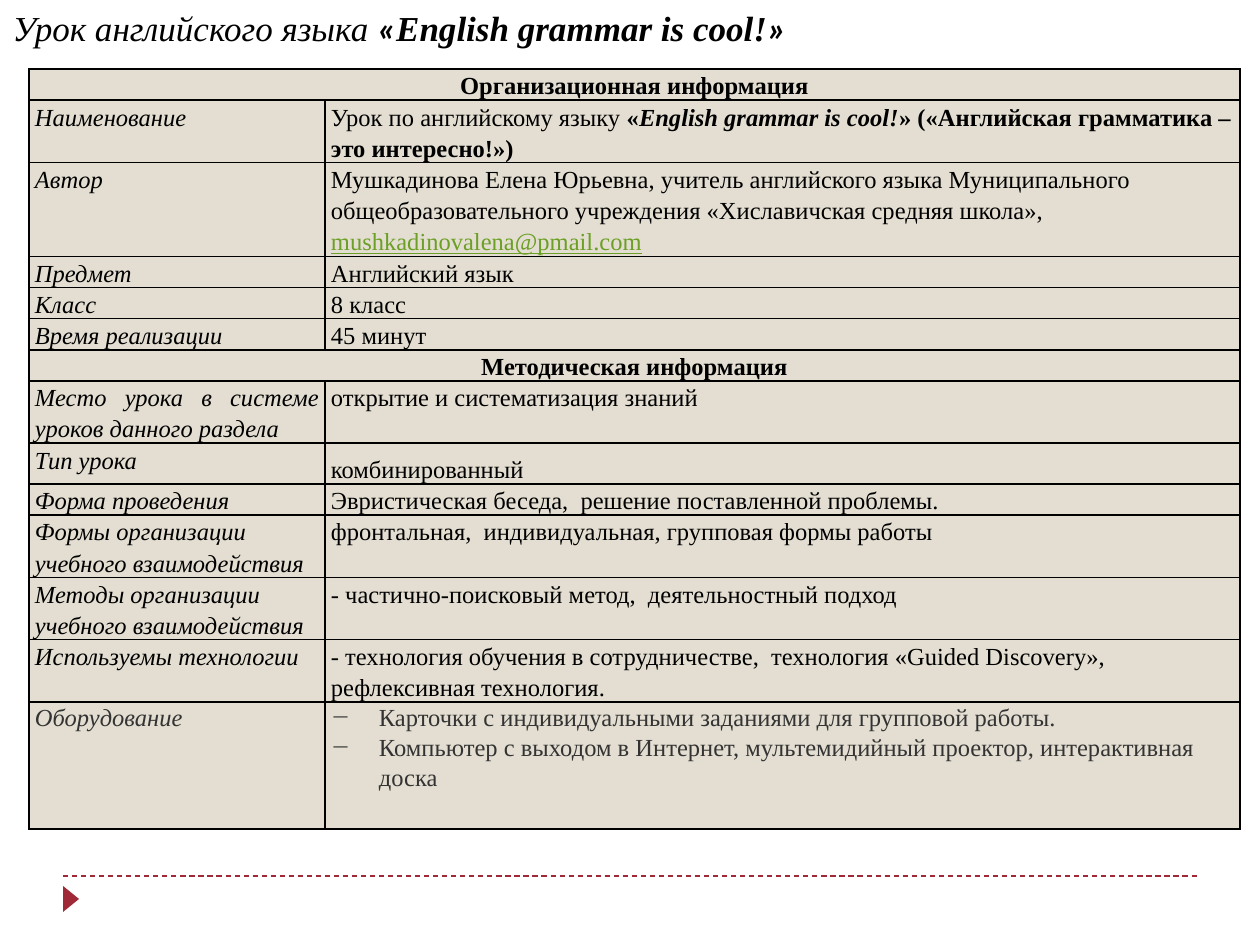
from lxml import etree
from pptx import Presentation
from pptx import util as u
from pptx.dml.color import RGBColor
from pptx.enum import dml, shapes, text
from pptx.oxml.ns import qn

COLOURS = {"ink": "000000", "soft": "333333", "mail": "6B9F25", "cell": "E3DED1",
           "accent": "9F2936", "paper": "FFFFFF"}
SERIF = "Times New Roman"
TITLE = [("Урок английского языка ", "i", SERIF), ("«", "bi", "Calibri"),
         ("English grammar is cool!", "bi", SERIF), ("»", "bi", "Calibri")]

# Row height, label, value runs (text, style); a row without a value is a section heading.
ROWS = [
    (31, "Организационная информация", None),
    (62, "Наименование", [
        ("Урок по английскому языку ", ""), ("«", "b"), ("English grammar is cool!", "bi"),
        ("» («Английская грамматика – это интересно!»)", "b")]),
    (94, "Автор", [
        ("Мушкадинова Елена Юрьевна, учитель английского языка Муниципального "
         "общеобразовательного учреждения «Хиславичская средняя школа», ", ""),
        ("mushkadinovalena@pmail.com", "u")]),
    (31, "Предмет", [("Английский язык", "")]),
    (31, "Класс", [("8 класс", "")]),
    (31, "Время реализации", [("45 минут", "")]),
    (31, "Методическая информация", None),
    (62, "Место урока в системе уроков данного раздела",
     [("открытие и систематизация знаний", "")]),
    (38, "Тип урока", [("комбинированный", "")]),
    (31, "Форма проведения", [("Эвристическая беседа,  решение поставленной проблемы.", "")]),
    (62, "Формы организации учебного взаимодействия",
     [("фронтальная,  индивидуальная, групповая формы работы", "")]),
    (62, "Методы организации учебного взаимодействия",
     [("- частично-поисковый метод,  деятельностный подход", "")]),
    (62, "Используемы технологии",
     [("- технология обучения в сотрудничестве,  технология «Guided Discovery»,  "
       "рефлексивная технология.", "")]),
]
EQUIPMENT = (127, "Оборудование", [
    "Карточки с индивидуальными заданиями для групповой работы.",
    "Компьютер с выходом в Интернет, мультемидийный проектор, интерактивная доска"])
COLUMNS = [296, 915]
JUSTIFIED_LABELS = {"Место урока в системе уроков данного раздела"}
JUSTIFIED_VALUES = {"Предмет", "Класс"} | JUSTIFIED_LABELS
LOOSE_VALUES = {"Тип урока"}
EQUIPMENT_LEADING = u.Pt(17.2)


def px(n):
    return round(n * u.Inches(1) / 126)


def colour(name):
    return RGBColor.from_string(COLOURS[name])


def set_all(target, values):
    for name, value in values.items():
        setattr(target, name, value)


def write(paragraph, runs, size, ink="ink", **layout):
    set_all(paragraph, layout)
    for words, style, face in runs:
        run = paragraph.add_run()
        run.text = words
        set_all(run.font, {"size": u.Pt(size), "name": face, "bold": "b" in style,
                           "italic": "i" in style, "underline": "u" in style})
        run.font.color.rgb = colour("mail" if "u" in style else ink)


def write_cell(paragraph, runs, ink="ink", **layout):
    write(paragraph, [(words, style, SERIF) for words, style in runs], 14, ink,
          **{"line_spacing": 1.15, "alignment": text.PP_ALIGN.LEFT, **layout})


def add_dash(paragraph):
    properties = paragraph._p.get_or_add_pPr()
    properties.set("marL", str(px(48)))
    properties.set("indent", str(-px(48)))
    etree.SubElement(properties, qn("a:buChar")).set("char", "−")


def format_cell(cell):
    """Borders go in before the fill, as the schema orders them."""
    properties = cell._tc.get_or_add_tcPr()
    for side in ("lnL", "lnR", "lnT", "lnB"):
        border = etree.SubElement(properties, qn("a:" + side), w=str(u.Pt(1)))
        fill = etree.SubElement(border, qn("a:solidFill"))
        etree.SubElement(fill, qn("a:srgbClr"), val=COLOURS["ink"])
    set_all(cell, {"margin_left": px(6), "margin_right": px(6),
                   "margin_top": 0, "margin_bottom": 0})
    cell.fill.solid()
    cell.fill.fore_color.rgb = colour("cell")


def add_footer_marks(slide):
    rule = slide.shapes.add_connector(shapes.MSO_CONNECTOR.STRAIGHT,
                                      px(63), px(876), px(1197), px(876))
    set_all(rule.line, {"width": u.Pt(0.75), "dash_style": dml.MSO_LINE.DASH})
    rule.line.color.rgb = colour("accent")
    etree.SubElement(rule._element.spPr, qn("a:effectLst"))
    arrow = slide.shapes.add_shape(shapes.MSO_SHAPE.ISOSCELES_TRIANGLE,
                                   px(58), px(891), px(26), px(16))
    arrow.rotation = 90
    arrow.shadow.inherit = False
    arrow.fill.solid()
    arrow.fill.fore_color.rgb = colour("accent")
    arrow.line.fill.background()


def add_lesson_table(slide):
    heights = [row[0] for row in ROWS] + [EQUIPMENT[0]]
    lesson = slide.shapes.add_table(len(heights), len(COLUMNS), px(29), px(69),
                                    px(sum(COLUMNS)), px(sum(heights))).table
    set_all(lesson, {"first_row": False, "horz_banding": False})
    for column, width in zip(lesson.columns, COLUMNS):
        column.width = px(width)
    for row, height in zip(lesson.rows, heights):
        row.height = px(height)
    for cell in lesson.iter_cells():
        format_cell(cell)

    align = text.PP_ALIGN
    for i, (_, label, value) in enumerate(ROWS):
        left, right = lesson.cell(i, 0), lesson.cell(i, 1)
        label_line = left.text_frame.paragraphs[0]
        if value is None:
            left.merge(right)
            write_cell(label_line, [(label, "b")], alignment=align.CENTER)
            continue
        write_cell(label_line, [(label, "i")],
                   alignment=align.JUSTIFY if label in JUSTIFIED_LABELS else align.LEFT)
        write_cell(right.text_frame.paragraphs[0], value,
                   alignment=align.JUSTIFY if label in JUSTIFIED_VALUES else align.LEFT,
                   line_spacing=1.5 if label in LOOSE_VALUES else 1.15)

    _, label, items = EQUIPMENT
    last = len(ROWS)
    write_cell(lesson.cell(last, 0).text_frame.paragraphs[0], [(label, "i")], "soft",
               line_spacing=EQUIPMENT_LEADING, space_after=u.Pt(8.6))
    frame = lesson.cell(last, 1).text_frame
    for n, item in enumerate(items):
        line = frame.add_paragraph() if n else frame.paragraphs[0]
        add_dash(line)
        write_cell(line, [(item, "")], "soft", line_spacing=EQUIPMENT_LEADING)


def add_title(slide):
    title = slide.shapes.title
    set_all(title, {"left": 0, "top": 0, "width": px(1231), "height": px(55)})
    title.fill.solid()
    title.fill.fore_color.rgb = colour("paper")
    set_all(title.text_frame, {"word_wrap": True, "auto_size": text.MSO_AUTO_SIZE.NONE,
                               "vertical_anchor": text.MSO_ANCHOR.MIDDLE})
    write(title.text_frame.paragraphs[0], TITLE, 20, alignment=text.PP_ALIGN.LEFT)


def main():
    deck = Presentation()
    set_all(deck, {"slide_width": px(1260), "slide_height": px(945)})
    slide = deck.slides.add_slide(deck.slide_layouts[5])
    add_title(slide)
    add_footer_marks(slide)
    add_lesson_table(slide)
    deck.save("out.pptx")


if __name__ == "__main__":
    main()
